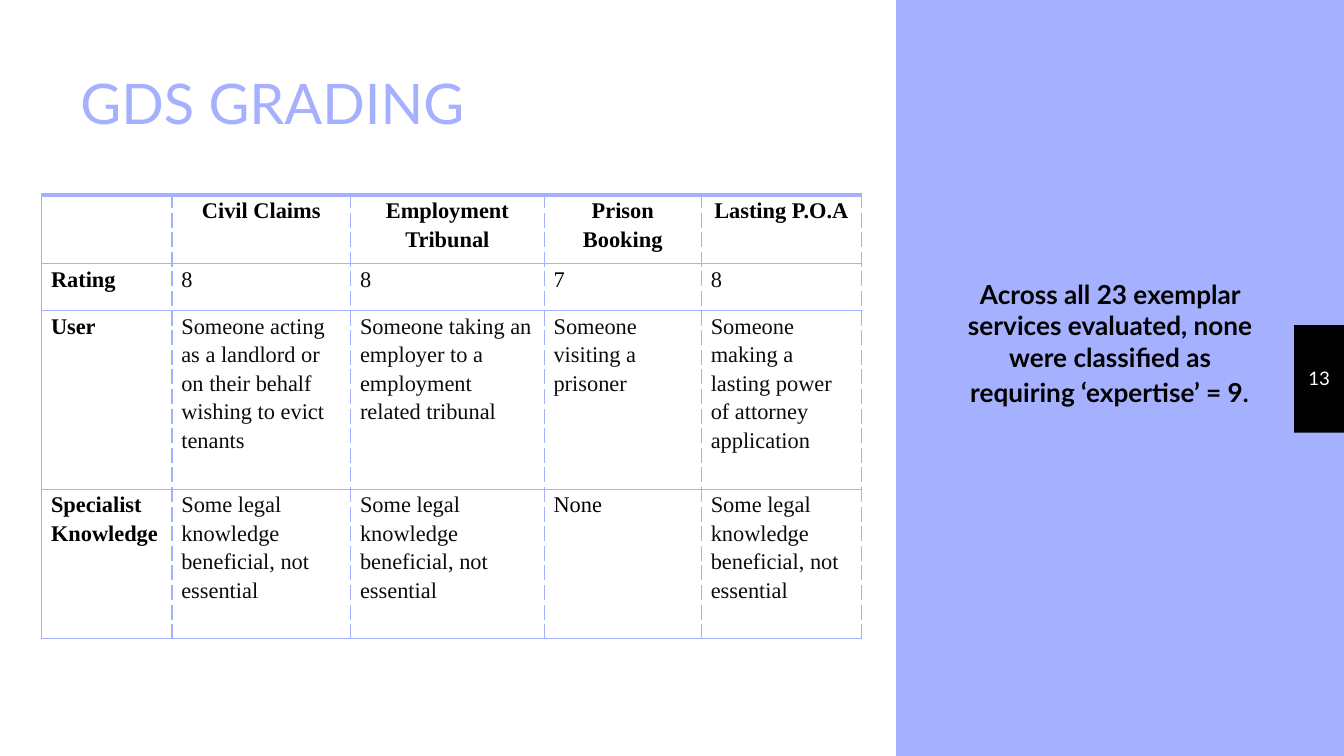
"""Build the GDS grading slide with its comparison table and side note."""
from lxml import etree
from pptx import Presentation
from pptx.dml.color import RGBColor
from pptx.enum.shapes import MSO_SHAPE
from pptx.enum.text import MSO_ANCHOR, PP_ALIGN
from pptx.oxml.ns import qn
from pptx.util import Pt

RECT = MSO_SHAPE.RECTANGLE
TOP, MIDDLE, BOTTOM = MSO_ANCHOR.TOP, MSO_ANCHOR.MIDDLE, MSO_ANCHOR.BOTTOM
LEFT, CENTER = PP_ALIGN.LEFT, PP_ALIGN.CENTER
LILAC, BLACK, INK, WHITE = "A5B0FE", "000000", "0B0C0C", "FFFFFF"


def rgb(value):
    return RGBColor.from_string(value)


def add_run(p, text, color, **fmt):
    r = p.add_run()
    r.text = text
    r.font.color.rgb = rgb(color)
    for name, value in fmt.items():
        setattr(r.font, name, value)


prs = Presentation()
prs.slide_width, prs.slide_height = Pt(720), Pt(405)
s = prs.slides.add_slide(prs.slide_layouts[6])
s.background.fill.solid()
s.background.fill.fore_color.rgb = rgb(LILAC)

panels = [
    (693.36, 174.24, 26.64, 57.6, BLACK),
    (0, 0, 480, 405, WHITE),
]
for x, y, w, h, color in panels:
    sp = s.shapes.add_shape(RECT, Pt(x), Pt(y), Pt(w), Pt(h))
    sp.shadow.inherit = False
    sp.fill.solid()
    sp.fill.fore_color.rgb = rgb(color)
    sp.line.fill.background()

note = "Across all 23 exemplar services evaluated, none were classified as requiring ‘expertise’ = 9"
texts = [
    ((693.36, 173.52, 26.64, 57.6), MIDDLE, CENTER, 7.2, 7.2,
     [("13", WHITE, {"size": Pt(10)})]),
    ((36, 12.24, 404.64, 67.68), BOTTOM, LEFT, 7.2, 7.2,
     [("GDS GRADING", LILAC, {"size": Pt(30)})]),
    ((493.2, 79.92, 185.04, 290.16), TOP, CENTER, 25.2, 76,
     [(note, BLACK, {"size": Pt(14), "bold": True}),
      (".", BLACK, {"size": Pt(16), "italic": True})]),
]
for box, anchor, align, left, top, runs in texts:
    tf = s.shapes.add_textbox(*map(Pt, box)).text_frame
    frame = {
        "word_wrap": True, "vertical_anchor": anchor,
        "margin_left": Pt(left), "margin_top": Pt(top),
        "margin_right": Pt(7.2), "margin_bottom": Pt(7.2),
    }
    for name, value in frame.items():
        setattr(tf, name, value)
    p = tf.paragraphs[0]
    p.alignment = align
    for text, color, fmt in runs:
        add_run(p, text, color, name="Lato", **fmt)

legal = "Some legal knowledge beneficial, not essential"
rows = [
    ["", "Civil Claims", "Employment Tribunal", "Prison Booking", "Lasting P.O.A"],
    ["Rating", "8", "8", "7", "8"],
    ["User",
     "Someone acting as a landlord or on their behalf wishing to evict tenants",
     "Someone taking an employer to a employment related tribunal",
     "Someone visiting a prisoner",
     "Someone making a lasting power of attorney application"],
    ["Specialist Knowledge", legal, legal, "None", legal],
]
widths = [69.84, 95.76, 103.68, 84.24, 85.68]
heights = [36.72, 25.2, 95.76, 79.92]
table = s.shapes.add_table(
    len(rows), len(widths), Pt(22.32), Pt(104.4), Pt(sum(widths)), Pt(sum(heights))
).table
table.first_row = table.horz_banding = False
for col, width in zip(table.columns, widths):
    col.width = Pt(width)
for row, height in zip(table.rows, heights):
    row.height = Pt(height)

cell_fmt = {
    "margin_left": Pt(5.04), "margin_right": Pt(5.04),
    "margin_top": 0, "margin_bottom": 0, "vertical_anchor": TOP,
}
for i, row in enumerate(rows):
    for j, text in enumerate(row):
        cell = table.cell(i, j)
        for name, value in cell_fmt.items():
            setattr(cell, name, value)
        cell.fill.background()
        p = cell.text_frame.paragraphs[0]
        p.alignment = CENTER if i == 0 else LEFT
        p.line_spacing = 1.15
        if text:
            heading = i == 0 or j == 0
            color = BLACK if heading or text in ("7", "None") else INK
            add_run(p, text, color, name="Times New Roman", size=Pt(12), bold=heading)
        edges = [
            ("a:lnL", 0.75, "solid" if j == 0 else "dash"),
            ("a:lnR", 0.75, "dash"),
            ("a:lnT", 2.25 if i == 0 else 0.75, "solid"),
            ("a:lnB", 0.75, "solid"),
        ]
        tcPr = cell._tc.get_or_add_tcPr()
        for k, (tag, weight, dash) in enumerate(edges):
            ln = etree.Element(qn(tag), w=str(Pt(weight)))
            fill = etree.SubElement(ln, qn("a:solidFill"))
            etree.SubElement(fill, qn("a:srgbClr"), val=LILAC)
            etree.SubElement(ln, qn("a:prstDash"), val=dash)
            tcPr.insert(k, ln)

prs.save("out.pptx")
